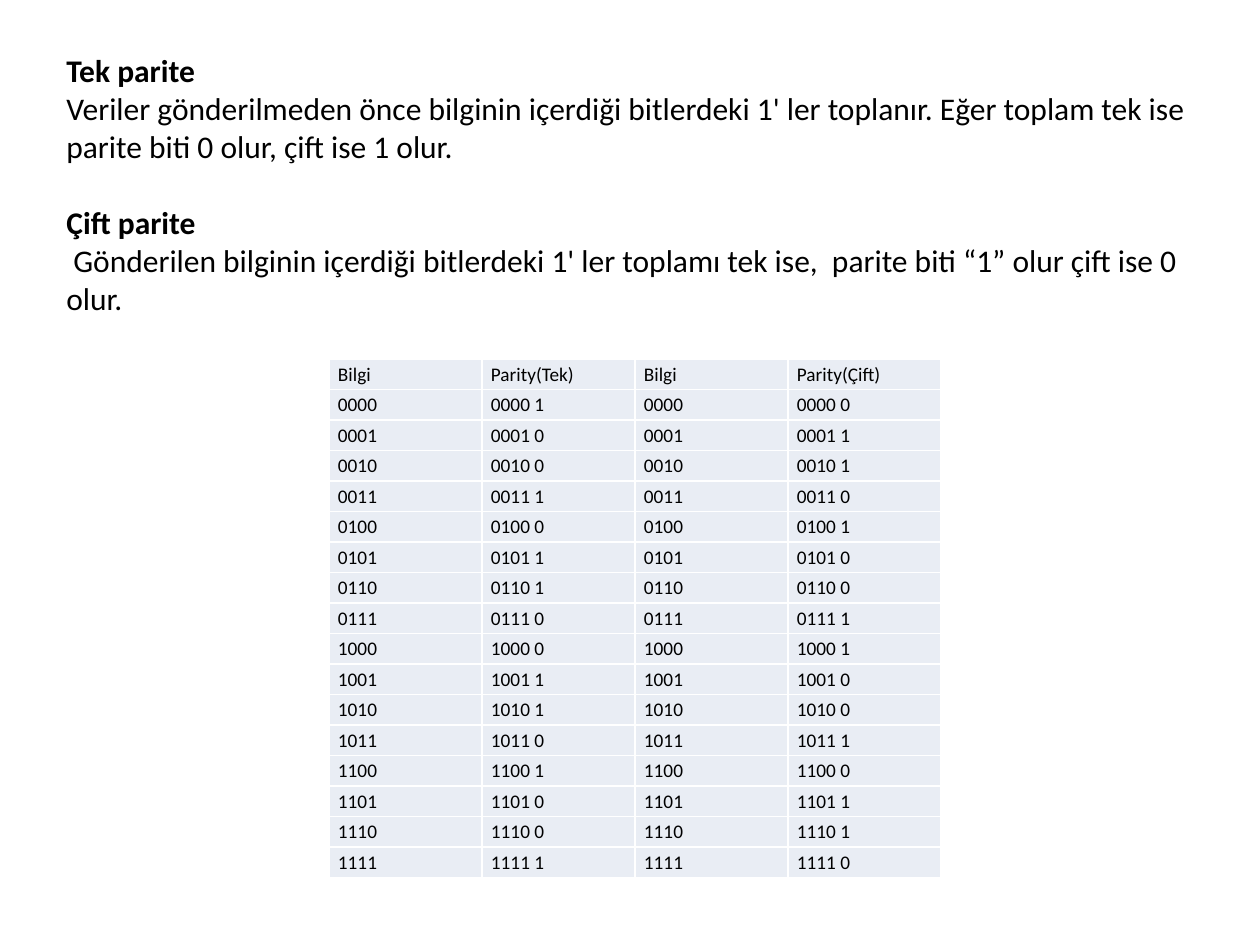
"""Build a slide that explains odd and even parity with a table of codes."""
from dataclasses import dataclass

from lxml.etree import SubElement
from pptx import Presentation
from pptx.dml.color import RGBColor
from pptx.enum.text import MSO_AUTO_SIZE, PP_ALIGN
from pptx.oxml.ns import qn
from pptx.util import Emu, Pt

FONT = "Calibri"
INK = "000000"
CELL = "E9EDF4"
EDGE = "FFFFFF"


@dataclass(frozen=True)
class Box:
    left: int
    top: int
    width: int
    height: int


@dataclass(frozen=True)
class Para:
    text: str
    bold: bool = False
    gap: int = 0
    indent: int = 0


PARAS = [
    Para("Tek parite", bold=True),
    Para("Veriler gönderilmeden önce bilginin içerdiği bitlerdeki 1' ler toplanır. "
         "Eğer toplam tek ise parite biti 0 olur, çift ise 1 olur."),
    Para("Çift parite", bold=True, gap=22),
    Para("Gönderilen bilginin içerdiği bitlerdeki 1' ler toplamı tek ise,  "
         "parite biti “1” olur çift ise 0 olur.", indent=7),
]
HEADS = ["Bilgi", "Parity(Tek)", "Bilgi", "Parity(Çift)"]


def px(size: int) -> Emu:
    """Turn pixels into EMU at 126 pixels to the inch."""
    return Emu(round(size * 914400 / 126))


def color(code: str) -> RGBColor:
    """Turn a hex string into a colour."""
    return RGBColor.from_string(code)


def style(para, size: int, bold: bool = False) -> None:
    """Format every run of a paragraph."""
    for run in para.runs:
        font = run.font
        font.name, font.size, font.bold = FONT, Pt(size), bold
        font.color.rgb = color(INK)


def prose(slide, box: Box, paras: list[Para]) -> None:
    """Draw the wrapped text block."""
    shape = slide.shapes.add_textbox(
        px(box.left), px(box.top), px(box.width), px(box.height))
    frame = shape.text_frame
    frame.word_wrap = True
    frame.auto_size = MSO_AUTO_SIZE.SHAPE_TO_FIT_TEXT
    frame.text = "\n".join(item.text for item in paras)
    for para, item in zip(frame.paragraphs, paras):
        para.space_before = Pt(item.gap)
        if item.indent:
            props = para._p.get_or_add_pPr()
            props.set("marL", "0")
            props.set("indent", str(px(item.indent)))
        style(para, 18, item.bold)


def border(cell) -> None:
    """Put a thin line on all four sides of a cell."""
    props = cell._tc.get_or_add_tcPr()
    for side in ("a:lnL", "a:lnR", "a:lnT", "a:lnB"):
        line = SubElement(props, qn(side), w=str(Pt(1)))
        fill = SubElement(line, qn("a:solidFill"))
        SubElement(fill, qn("a:srgbClr"), val=EDGE)


def fill_cell(cell, text: str, head: bool) -> None:
    """Write and format one table cell."""
    cell.margin_left = cell.margin_right = px(9)
    cell.margin_top = cell.margin_bottom = 0
    border(cell)
    cell.fill.solid()
    cell.fill.fore_color.rgb = color(CELL)
    cell.text_frame.text = text
    para = cell.text_frame.paragraphs[0]
    para.line_spacing = 1.15
    para.alignment = PP_ALIGN.JUSTIFY if head else PP_ALIGN.LEFT
    style(para, 11)


def codes(num: int) -> list[str]:
    """Give the four cells for one number."""
    bits = f"{num:04b}"
    even = bits.count("1") % 2
    return [bits, f"{bits} {1 - even}", bits, f"{bits} {even}"]


def grid(slide, box: Box, rows: list[list[str]]) -> None:
    """Draw the table with equal rows and columns."""
    table = slide.shapes.add_table(
        len(rows), len(rows[0]), px(box.left), px(box.top),
        px(box.width), px(box.height)).table
    table.first_row = table.horz_banding = False
    for row, texts in enumerate(rows):
        for col, text in enumerate(texts):
            fill_cell(table.cell(row, col), text, row == 0)


def main() -> None:
    """Build and save the slide."""
    deck = Presentation()
    deck.slide_width, deck.slide_height = px(1260), px(945)
    slide = deck.slides.add_slide(deck.slide_layouts[6])
    prose(slide, Box(54, 45, 1161, 318), PARAS)
    grid(slide, Box(329, 359, 612, 519), [HEADS] + [codes(num) for num in range(16)])
    deck.save("out.pptx")


if __name__ == "__main__":
    main()
